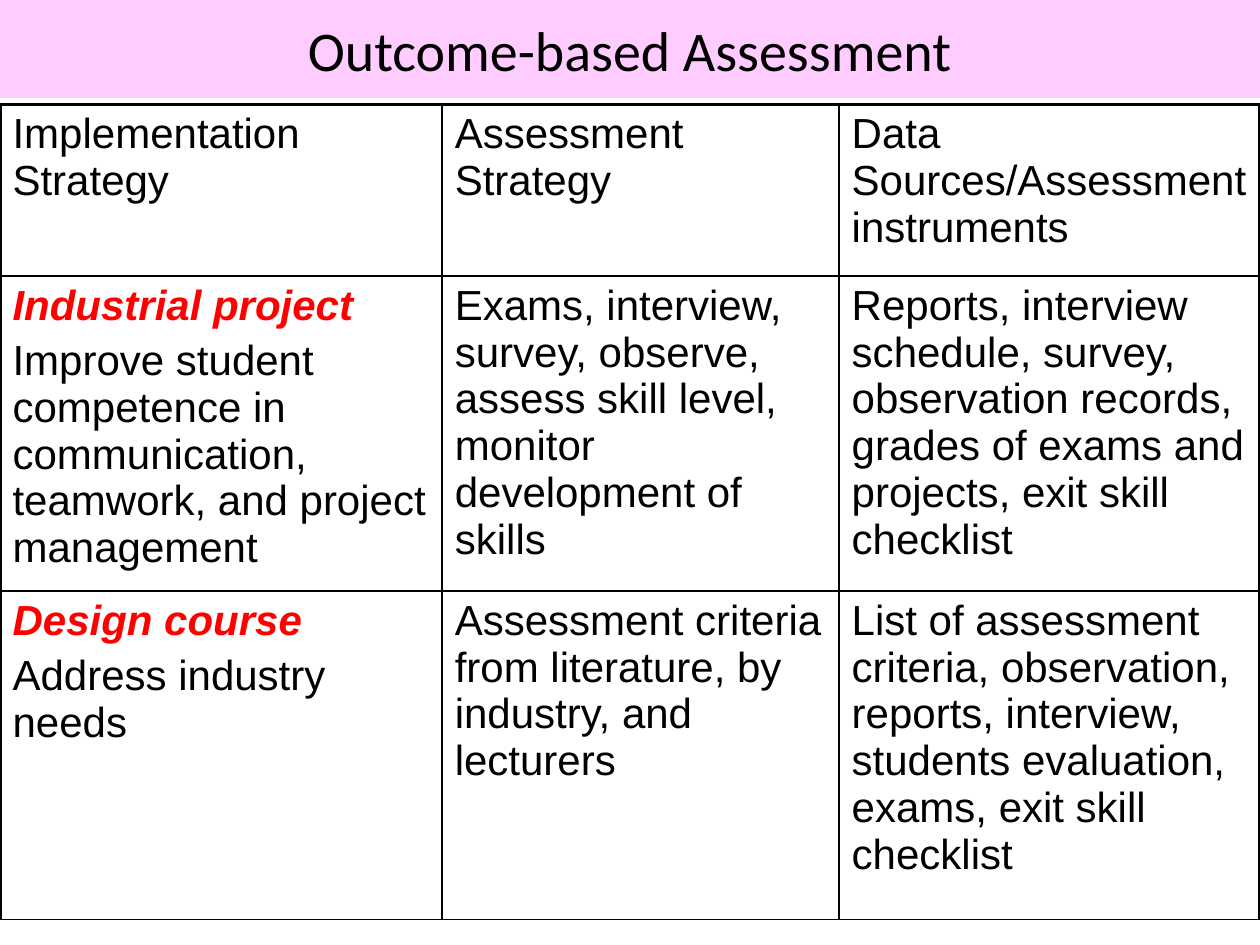
from lxml import etree
from pptx import Presentation
from pptx.dml.color import RGBColor
from pptx.enum.shapes import MSO_SHAPE
from pptx.enum.text import MSO_ANCHOR, PP_ALIGN
from pptx.oxml.ns import qn
from pptx.util import Inches, Pt

RECTANGLE = MSO_SHAPE.RECTANGLE
MIDDLE = MSO_ANCHOR.MIDDLE
CENTER = PP_ALIGN.CENTER
BLACK = RGBColor(0x00, 0x00, 0x00)
RED = RGBColor(0xFF, 0x00, 0x00)
PINK = RGBColor(0xFF, 0xCC, 0xFF)

TITLE = {"name": "Calibri", "size": Pt(32)}
BODY = {"name": "Arial", "size": Pt(24), "bold": False, "italic": False}
HEADING = {**BODY, "bold": True, "italic": True}

COLUMNS = [3.51, 3.15, 3.34]
ROWS = [1.36, 2.5, 2.61]
CELLS = [
    [
        ["Implementation Strategy"],
        ["Assessment Strategy"],
        ["Data Sources/Assessment instruments"],
    ],
    [
        ["Industrial project",
         "Improve student competence in communication, teamwork, and project management"],
        ["Exams, interview, survey, observe, assess skill level, monitor development of skills"],
        ["Reports, interview schedule, survey, observation records, "
         "grades of exams and projects, exit skill checklist"],
    ],
    [
        ["Design course", "Address industry needs"],
        ["Assessment criteria from literature, by industry, and lecturers"],
        ["List of assessment criteria, observation, reports, interview, "
         "students evaluation, exams, exit skill checklist"],
    ],
]


def add_run(p, text, style, color):
    r = p.add_run()
    r.text = text
    for key, value in style.items():
        setattr(r.font, key, value)
    r.font.color.rgb = color


def add_border(cell, side, width):
    ln = etree.SubElement(cell._tc.get_or_add_tcPr(), qn(f"a:ln{side}"), w=str(Pt(width)))
    fill = etree.SubElement(ln, qn("a:solidFill"))
    etree.SubElement(fill, qn("a:srgbClr"), val=str(BLACK))


prs = Presentation()
prs.slide_width = Inches(10)
prs.slide_height = Inches(7.5)
s = prs.slides.add_slide(prs.slide_layouts[6])

sp = s.shapes.add_shape(RECTANGLE, Inches(0), Inches(0), Inches(10), Inches(0.78))
sp.shadow.inherit = False
sp.fill.solid()
sp.fill.fore_color.rgb = PINK
sp.line.fill.background()
tf = sp.text_frame
tf.word_wrap = True
tf.vertical_anchor = MIDDLE
p = tf.paragraphs[0]
p.alignment = CENTER
add_run(p, "Outcome-based Assessment", TITLE, BLACK)

table = s.shapes.add_table(len(ROWS), len(COLUMNS), Inches(0), Inches(0.83),
                           Inches(sum(COLUMNS)), Inches(sum(ROWS))).table
table.first_row = False
table.horz_banding = False
for column, width in zip(table.columns, COLUMNS):
    column.width = Inches(width)
for row, height in zip(table.rows, ROWS):
    row.height = Inches(height)

for i, row in enumerate(CELLS):
    for j, texts in enumerate(row):
        cell = table.cell(i, j)
        outer = {"L": j == 0, "R": j == len(COLUMNS) - 1, "T": i == 0, "B": False}
        for side, thick in outer.items():
            add_border(cell, side, 2.25 if thick else 1)
        cell.fill.background()
        tf = cell.text_frame
        for k, text in enumerate(texts):
            p = tf.add_paragraph() if k else tf.paragraphs[0]
            p.space_before = Pt(4.8)
            is_heading = len(texts) > 1 and k == 0
            add_run(p, text, HEADING if is_heading else BODY, RED if is_heading else BLACK)

prs.save("out.pptx")
